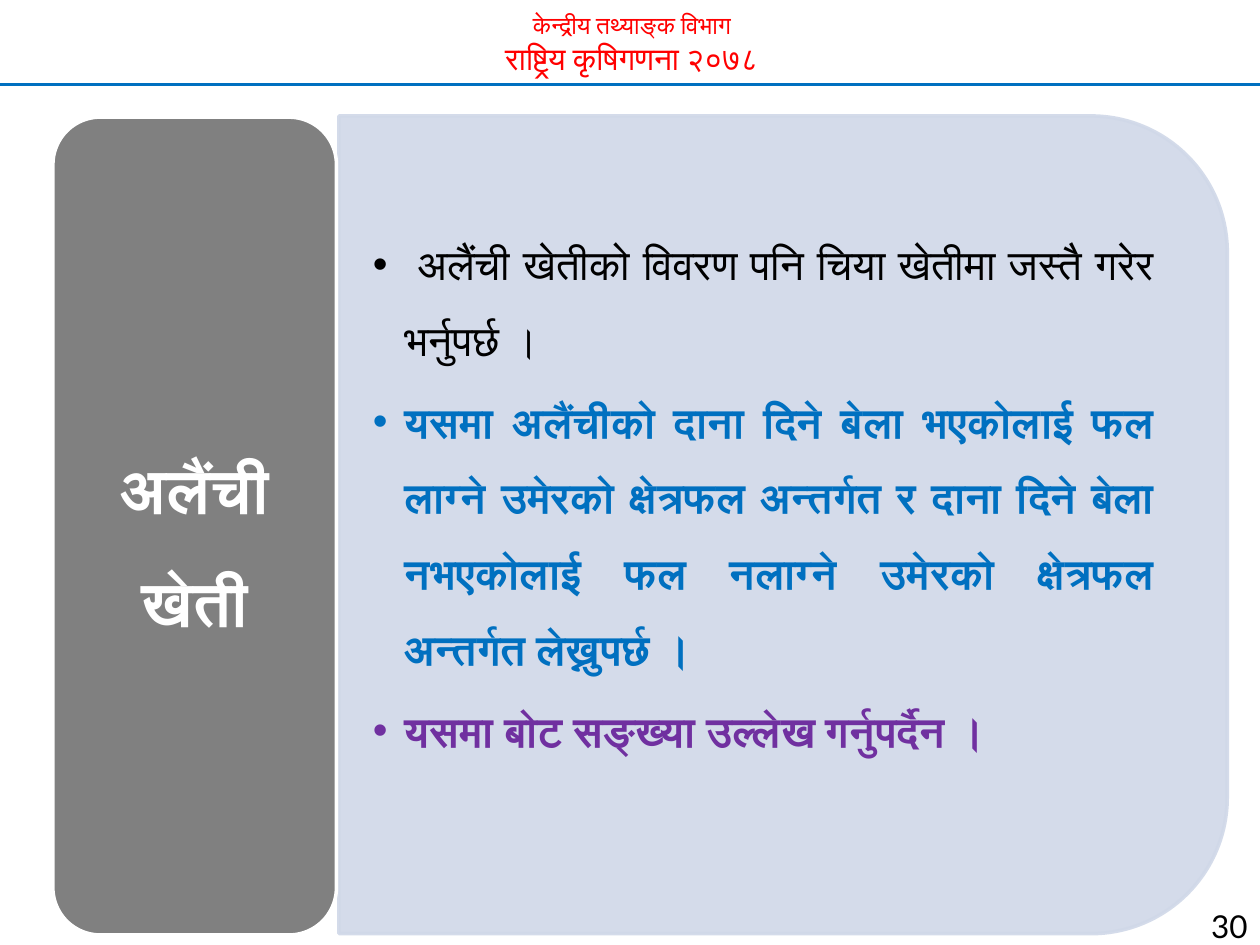
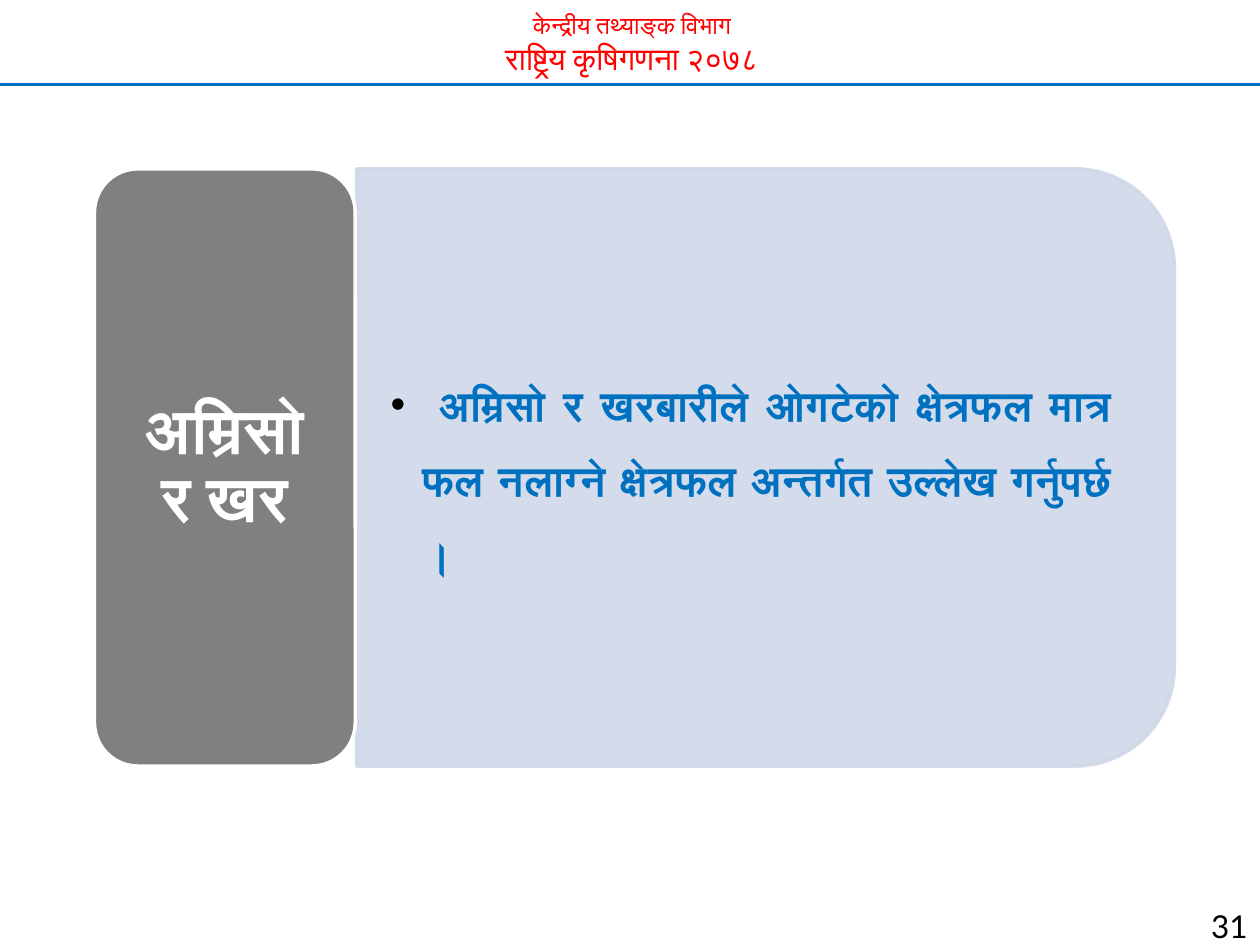
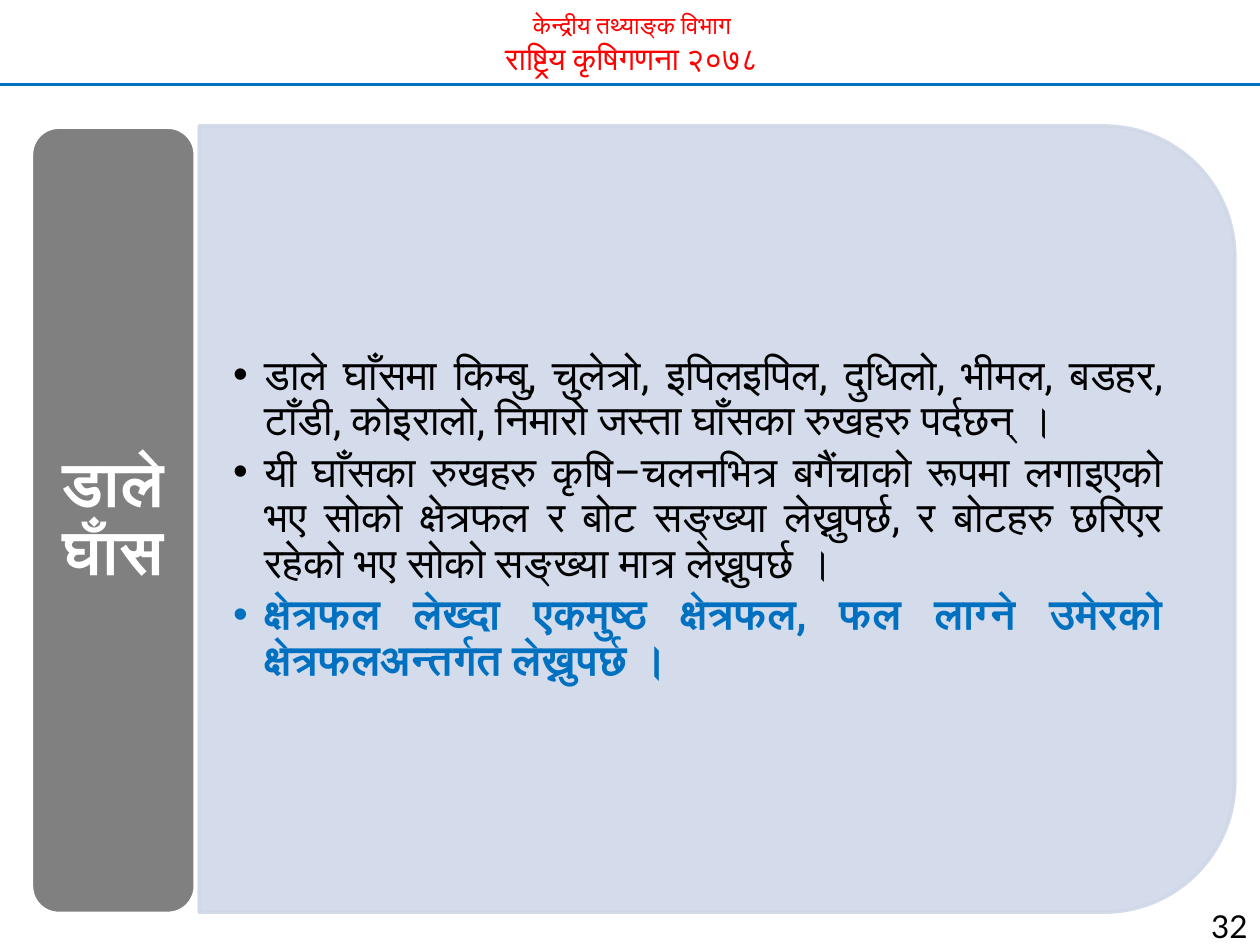
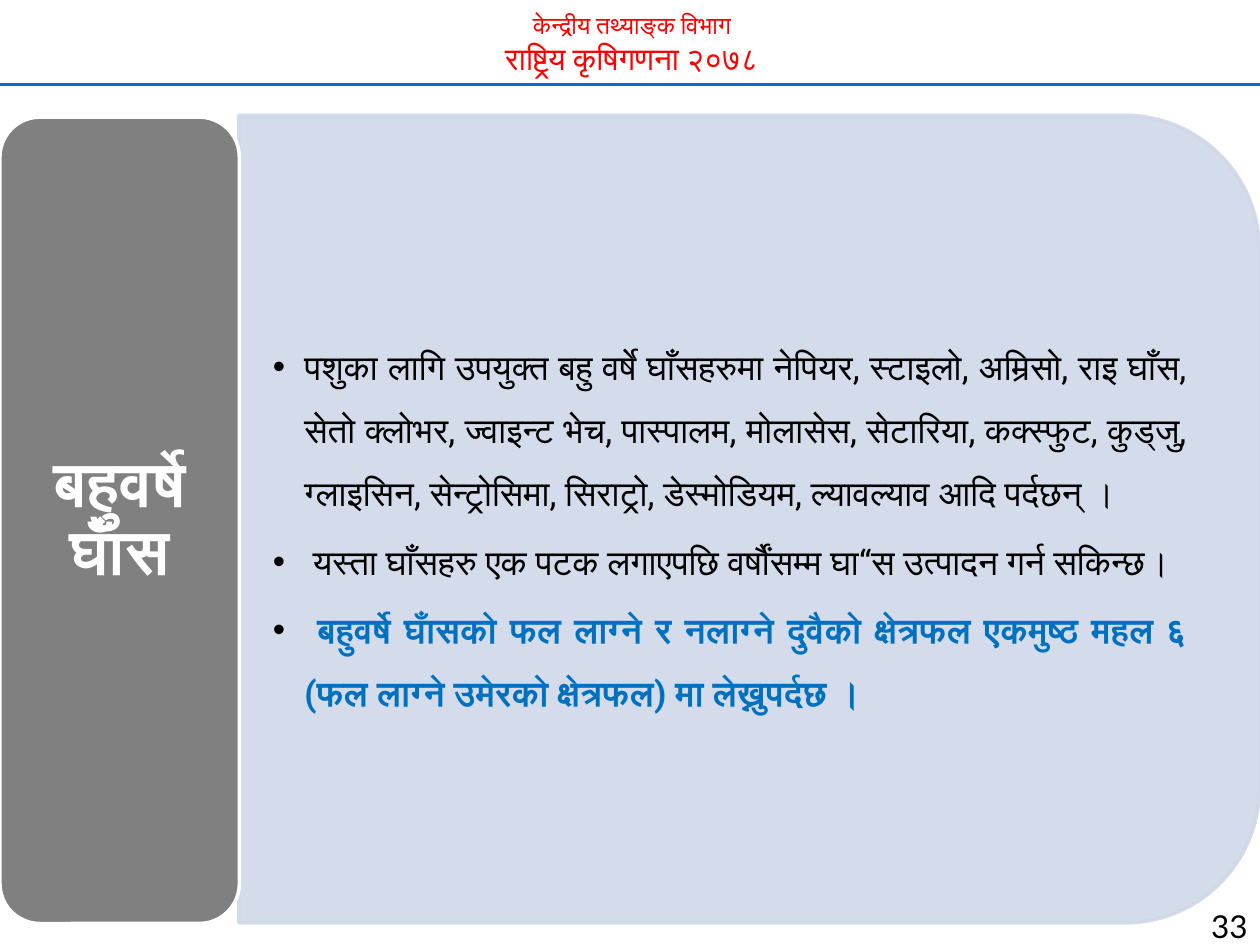
from dataclasses import dataclass
from typing import NamedTuple

from lxml.etree import SubElement
from pptx import Presentation
from pptx.dml.color import RGBColor
from pptx.enum.shapes import MSO_CONNECTOR as Connector, MSO_SHAPE as Preset
from pptx.enum.text import MSO_ANCHOR as Anchor, PP_ALIGN as Align
from pptx.oxml.ns import qn
from pptx.util import Inches, Pt

SLIDE_WIDTH, SLIDE_HEIGHT = Inches(10), Inches(7.5)
COLUMNS, ROWS = 100, 75
CORNER = 0.16667  # default rounding, as a share of the shorter side
CORNER_INSET = CORNER * 0.29  # where a text area clears a rounded corner


@dataclass(frozen=True)
class Theme:
    header: str = "FF0000"
    rule: str = "0070C0"
    panel: str = "D0D8E8"
    panel_opacity: int = 90
    label: str = "808080"
    white: str = "FFFFFF"
    body: str = "000000"
    stress: str = "0070C0"
    remark: str = "7030A0"
    header_font: str = "Calibri"
    body_font: str = "Roboto"
    number_font: str = "Lato"
    office_size: int = 14
    census_size: int = 18
    number_size: int = 18
    label_size: int = 36
    body_size: int = 24
    dense_size: int = 20


THEME = Theme()


class Area(NamedTuple):
    """A rectangle in grid columns and rows."""
    column: float
    row: float
    width: float
    height: float

    def lengths(self) -> tuple[int, int, int, int]:
        return (col(self.column), row(self.row), col(self.width), row(self.height))


class Point(NamedTuple):
    """One bulleted statement."""
    text: str
    color: str = THEME.body
    bold: bool = False
    marker: str = ""


@dataclass(frozen=True)
class Topic:
    number: int
    title: str
    label: Area
    panel: Area
    points: tuple[Point, ...]
    size: int = THEME.body_size
    spacing: float = 1.5
    title_spacing: float = 0.9
    lift: float = 0  # extra rows kept free below the statements


TOPICS = (
    Topic(30, "अलैंची खेती", Area(4.2, 9.3, 22.5, 64.9), Area(26.9, 9.2, 70.5, 64.9), (
        Point(" अलैंची खेतीको विवरण पनि चिया खेतीमा जस्तै गरेर भर्नुपर्छ ।"),
        Point("यसमा अलैंचीको दाना दिने बेला भएकोलाई फल लाग्ने उमेरको क्षेत्रफल "
              "अन्तर्गत र दाना दिने बेला नभएकोलाई फल नलाग्ने उमेरको क्षेत्रफल "
              "अन्तर्गत लेख्नुपर्छ ।", THEME.stress, True),
        Point("यसमा बोट सङ्ख्या उल्लेख गर्नुपर्दैन ।", THEME.remark, True),
    ), title_spacing=1.5, lift=6.4),
    Topic(31, "अम्रिसो र खर", Area(7.5, 13.4, 20.7, 47.4), Area(28.3, 13.4, 64.9, 47.4), (
        Point(" अम्रिसो र खरबारीले ओगटेको क्षेत्रफल मात्र फल नलाग्ने क्षेत्रफल "
              "अन्तर्गत उल्लेख गर्नुपर्छ ।", THEME.stress, True, THEME.body),
    )),
    Topic(32, "डाले घाँस", Area(2.5, 10.1, 13, 62.4), Area(15.8, 10, 82.2, 62.4), (
        Point("डाले घाँसमा किम्बु, चुलेत्रो, इपिलइपिल, दुधिलो, भीमल, बडहर, टाँडी, "
              "कोइरालो, निमारो जस्ता घाँसका रुखहरु पर्दछन् ।"),
        Point("यी घाँसका रुखहरु कृषि–चलनभित्र बगैंचाको रूपमा लगाइएको भए सोको "
              "क्षेत्रफल र बोट सङ्ख्या लेख्नुपर्छ, र बोटहरु छरिएर रहेको भए सोको "
              "सङ्ख्या मात्र लेख्नुपर्छ ।"),
        Point("क्षेत्रफल लेख्दा एकमुष्ठ क्षेत्रफल, फल लाग्ने उमेरको "
              "क्षेत्रफलअन्तर्गत लेख्नुपर्छ ।", THEME.stress, True),
    ), spacing=0.9),
    Topic(33, "बहुवर्षे घाँस", Area(0, 9.3, 19, 64), Area(18.95, 9.15, 81, 64.1), (
        Point("पशुका लागि उपयुक्त बहु वर्षे घाँसहरुमा नेपियर, स्टाइलो, अम्रिसो, "
              "राइ घाँस, सेतो क्लोभर, ज्वाइन्ट भेच, पास्पालम, मोलासेस, सेटारिया, "
              "कक्स्फुट, कुड्जु, ग्लाइसिन, सेन्ट्रोसिमा, सिराट्रो, डेस्मोडियम, "
              "ल्यावल्याव आदि पर्दछन् ।"),
        Point(" यस्ता घाँसहरु एक पटक लगाएपछि वर्षौंसम्म घा“स उत्पादन गर्न सकिन्छ।"),
        Point(" बहुवर्षे घाँसको फल लाग्ने र नलाग्ने दुवैको क्षेत्रफल एकमुष्ठ महल ६ "
              "(फल लाग्ने उमेरको क्षेत्रफल) मा लेख्नुपर्दछ ।",
              THEME.stress, True, THEME.body),
    ), size=THEME.dense_size),
)


def col(count: float) -> int:
    return round(SLIDE_WIDTH * count / COLUMNS)


def row(count: float) -> int:
    return round(SLIDE_HEIGHT * count / ROWS)


def rgb(code: str) -> RGBColor:
    return RGBColor.from_string(code)


def add_bullet(paragraph, color: str) -> None:
    properties = paragraph._p.get_or_add_pPr()
    properties.set("marL", str(col(2.5)))
    properties.set("indent", str(-col(2.5)))
    marker_color = SubElement(properties, qn("a:buClr"))
    SubElement(marker_color, qn("a:srgbClr"), val=color)
    SubElement(properties, qn("a:buFont"), typeface="Arial")
    SubElement(properties, qn("a:buChar"), char="•")


def write(frame, text: str, *, size: float, font: str, color: str, bold: bool = False,
          align: Align = Align.CENTER, spacing: float = 1.0, after: float = 0,
          marker: str = "") -> None:
    """Add a paragraph; `after` is a share of the type size."""
    first = frame.paragraphs[0]
    paragraph = frame.add_paragraph() if first.runs else first
    if marker:
        add_bullet(paragraph, marker)
    paragraph.alignment = align
    paragraph.line_spacing = spacing
    paragraph.space_after = Pt(size * after)
    run = paragraph.add_run()
    run.text = text
    run.font.size, run.font.bold, run.font.name = Pt(size), bold, font
    run.font.color.rgb = rgb(color)
    SubElement(run._r.get_or_add_rPr(), qn("a:cs"), typeface=font)


def set_frame(frame, *, anchor: Anchor = Anchor.TOP, side: float = 1, edge: float = 0.5,
              lift: float = 0) -> None:
    frame.word_wrap = True
    frame.vertical_anchor = anchor
    frame.margin_left = frame.margin_right = col(side)
    frame.margin_top, frame.margin_bottom = row(edge), row(edge + lift)


def add_text_area(slide, area: Area, **layout):
    frame = slide.shapes.add_textbox(*area.lengths()).text_frame
    set_frame(frame, **layout)
    return frame


def add_block(slide, preset: Preset, area: Area, fill: str, line: str):
    block = slide.shapes.add_shape(preset, *area.lengths())
    block.shadow.inherit = False
    block.fill.solid()
    block.fill.fore_color.rgb = rgb(fill)
    block.line.color.rgb = rgb(line)
    block.line.width = Pt(2)
    return block


def add_header(slide) -> None:
    frame = add_text_area(slide, Area(7, 0.3, 86.3, 6.4))
    for text, size in (("केन्द्रीय तथ्याङ्क विभाग", THEME.office_size),
                       ("राष्ट्रिय कृषिगणना २०७८", THEME.census_size)):
        write(frame, text, size=size, font=THEME.header_font, color=THEME.header)
    rule = slide.shapes.add_connector(Connector.STRAIGHT, 0, row(6.7), SLIDE_WIDTH, row(6.7))
    rule.line.color.rgb = rgb(THEME.rule)
    rule.line.width = Pt(1.5)
    SubElement(rule._element.spPr, qn("a:effectLst"))


def add_panel(slide, topic: Topic) -> None:
    """Draw the panel, turned so that its round corners face right, and its statements."""
    left, top, width, height = topic.panel
    upright = Area(left + (width - height) / 2, top + (height - width) / 2, height, width)
    panel = add_block(slide, Preset.ROUND_2_SAME_RECTANGLE, upright, THEME.panel, THEME.panel)
    panel.rotation = 90
    for color in panel._element.spPr.iter(qn("a:srgbClr")):
        SubElement(color, qn("a:alpha"), val=str(THEME.panel_opacity * 1000))

    inset = CORNER_INSET * min(width, height)
    frame = add_text_area(slide, Area(left, top + inset, width - inset, height - 2 * inset),
                          anchor=Anchor.MIDDLE, side=2.7, edge=1.4, lift=topic.lift)
    for point in topic.points:
        write(frame, point.text, size=topic.size, font=THEME.body_font, color=point.color,
              bold=point.bold, align=Align.JUSTIFY, spacing=topic.spacing, after=0.15,
              marker=point.marker or point.color)


def add_label(slide, topic: Topic) -> None:
    label = add_block(slide, Preset.ROUNDED_RECTANGLE, topic.label, THEME.label, THEME.white)
    set_frame(label.text_frame, anchor=Anchor.MIDDLE, side=1.5, edge=0.7)
    write(label.text_frame, topic.title, size=THEME.label_size, font=THEME.body_font,
          color=THEME.white, bold=True, spacing=topic.title_spacing, after=0.35)


def add_page_number(slide, number: int) -> None:
    frame = add_text_area(slide, Area(92.3, 70, 7.7, 4.2))
    write(frame, str(number), size=THEME.number_size, font=THEME.number_font,
          color=THEME.body, align=Align.RIGHT, spacing=1.5)


def main() -> None:
    deck = Presentation()
    deck.slide_width, deck.slide_height = SLIDE_WIDTH, SLIDE_HEIGHT
    for topic in TOPICS:
        slide = deck.slides.add_slide(deck.slide_layouts[6])
        add_header(slide)
        add_panel(slide, topic)
        add_label(slide, topic)
        add_page_number(slide, topic.number)
    deck.save("out.pptx")


if __name__ == "__main__":
    main()
